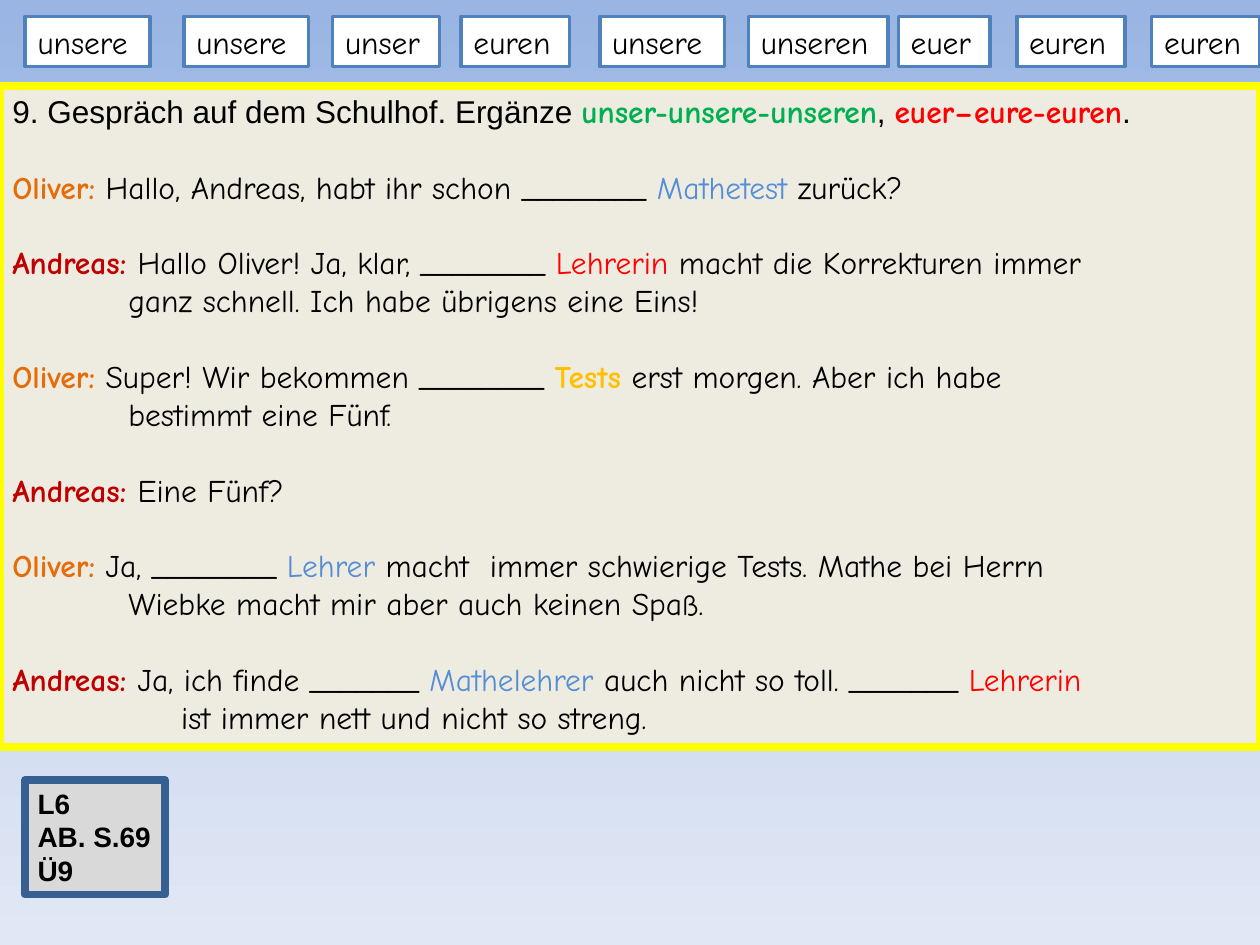
from copy import deepcopy
from typing import NamedTuple

from pptx import Presentation
from pptx.dml.color import RGBColor
from pptx.enum.text import MSO_AUTO_SIZE as AutoSize
from pptx.oxml.ns import qn
from pptx.util import Inches, Pt

BLACK = RGBColor(0x00, 0x00, 0x00)
WHITE = RGBColor(0xFF, 0xFF, 0xFF)
RED = RGBColor(0xFF, 0x00, 0x00)
GREEN = RGBColor(0x00, 0xB0, 0x50)
BLUE = RGBColor(0x55, 0x8E, 0xD5)
GOLD = RGBColor(0xFF, 0xC0, 0x00)
ORANGE = RGBColor(0xE4, 0x6C, 0x0A)
DARK_RED = RGBColor(0xC0, 0x00, 0x00)
YELLOW = RGBColor(0xFF, 0xFF, 0x00)
CREAM = RGBColor(0xEE, 0xEC, 0xE1)
GREY = RGBColor(0xD9, 0xD9, 0xD9)
CARD_BLUE = RGBColor(0x4F, 0x81, 0xBD)
LABEL_BLUE = RGBColor(0x37, 0x60, 0x92)
SKY = [RGBColor(0x9A, 0xB5, 0xE4), RGBColor(0xC2, 0xD1, 0xED), RGBColor(0xE1, 0xE8, 0xF5)]

PLAIN, HAND = "Arial", "Comic Neue"
ROW_GAP = Pt(21.7)  # one empty row between speeches


class Phrase(NamedTuple):
    text: str
    color: RGBColor = BLACK
    bold: bool = False
    font: str = HAND


class Line(NamedTuple):
    phrases: list[Phrase]
    gap: bool = False
    indent: float = 0


class Box(NamedTuple):
    left: float
    top: float
    width: float
    height: float
    fill: RGBColor
    border: RGBColor
    border_pt: float
    wrap: bool = False


class Card(NamedTuple):
    word: str
    left: float
    width: float


OLIVER = Phrase("Oliver:", ORANGE, True)
ANDREAS = Phrase("Andreas: ", DARK_RED, True)

EXERCISE = [
    Line([Phrase("9. Gespräch auf dem Schulhof. Ergänze ", font=PLAIN),
          Phrase("unser-unsere-unseren", GREEN, True), Phrase(", ", font=PLAIN),
          Phrase("euer–eure-euren", RED, True), Phrase(".", font=PLAIN)]),
    Line([OLIVER, Phrase(" Hallo, Andreas, habt ihr schon ________ "),
          Phrase("Mathetest ", BLUE), Phrase("zurück?")], gap=True),
    Line([ANDREAS, Phrase("Hallo Oliver! Ja, klar, ________ "),
          Phrase("Lehrerin", RED), Phrase(" macht die Korrekturen immer")], gap=True),
    Line([Phrase("ganz schnell. Ich habe übrigens eine Eins!")], indent=0.92),
    Line([OLIVER, Phrase(" Super! Wir bekommen ________ "),
          Phrase("Tests", GOLD, True), Phrase(" erst morgen. Aber ich habe")], gap=True),
    Line([Phrase("bestimmt eine Fünf.")], indent=0.92),
    Line([ANDREAS, Phrase("Eine Fünf?")], gap=True),
    Line([OLIVER, Phrase(" Ja, ________ "), Phrase("Lehrer", BLUE),
          Phrase(" macht  immer schwierige Tests. Mathe bei Herrn")], gap=True),
    Line([Phrase("Wiebke macht mir aber auch keinen Spaß.")], indent=0.92),
    Line([ANDREAS, Phrase("Ja, ich finde _______ "), Phrase("Mathelehrer", BLUE),
          Phrase(" auch nicht so toll. _______ "), Phrase("Lehrerin", RED)], gap=True),
    Line([Phrase("ist immer nett und nicht so streng.")], indent=1.34),
]

SOURCE_LABEL = [Line([Phrase(text, bold=True, font=PLAIN)])
                for text in ("L6", "AB. S.69", "Ü9")]

CARDS = [
    Card("unsere", 0.2, 0.99), Card("unsere", 1.46, 0.99), Card("unser", 2.64, 0.85),
    Card("euren", 3.66, 0.86), Card("unsere", 4.76, 0.99), Card("unseren", 5.94, 1.11),
    Card("euer", 7.13, 0.73), Card("euren", 8.07, 0.86), Card("euren", 9.14, 0.86),
]


def paint_background(slide) -> None:
    """Fill the slide with a vertical three-stop gradient."""
    fill = slide.background.fill
    fill.gradient()
    fill.gradient_angle = 270
    stop_list = slide.element.find(".//" + qn("a:gsLst"))
    stop_list.insert(1, deepcopy(stop_list[0]))
    for index, (stop, color) in enumerate(zip(fill.gradient_stops, SKY)):
        stop.color.rgb = color
        stop.position = index / (len(SKY) - 1)


def add_text_panel(slide, box: Box, lines: list[Line], size: float) -> None:
    """Draw a bordered text box holding the given lines."""
    panel = slide.shapes.add_textbox(Inches(box.left), Inches(box.top),
                                     Inches(box.width), Inches(box.height))
    panel.fill.solid()
    panel.fill.fore_color.rgb = box.fill
    panel.line.color.rgb = box.border
    panel.line.width = Pt(box.border_pt)
    frame = panel.text_frame
    frame.word_wrap = box.wrap
    frame.auto_size = AutoSize.SHAPE_TO_FIT_TEXT
    for index, line in enumerate(lines):
        paragraph = frame.add_paragraph() if index else frame.paragraphs[0]
        if line.gap:
            paragraph.space_before = ROW_GAP
        if line.indent:
            paragraph._p.get_or_add_pPr().set("marL", str(Inches(line.indent)))
        for phrase in line.phrases:
            run = paragraph.add_run()
            run.text = phrase.text
            run.font.size = Pt(size)
            run.font.name = phrase.font
            run.font.bold = phrase.bold
            run.font.color.rgb = phrase.color


def main() -> None:
    deck = Presentation()
    deck.slide_width, deck.slide_height = Inches(10), Inches(7.5)
    slide = deck.slides.add_slide(deck.slide_layouts[6])
    paint_background(slide)

    # Dialogue with gaps to fill in
    add_text_panel(slide, Box(0, 0.68, 10, 5.25, CREAM, YELLOW, 4.5, wrap=True), EXERCISE, 18)

    # Workbook reference
    add_text_panel(slide, Box(0.2, 6.19, 1.11, 0.91, GREY, LABEL_BLUE, 4.5), SOURCE_LABEL, 16)

    # Word cards along the top
    for card in CARDS:
        add_text_panel(slide, Box(card.left, 0.13, card.width, 0.4, WHITE, CARD_BLUE, 2),
                       [Line([Phrase(card.word)])], 18)

    deck.save("out.pptx")


if __name__ == "__main__":
    main()
